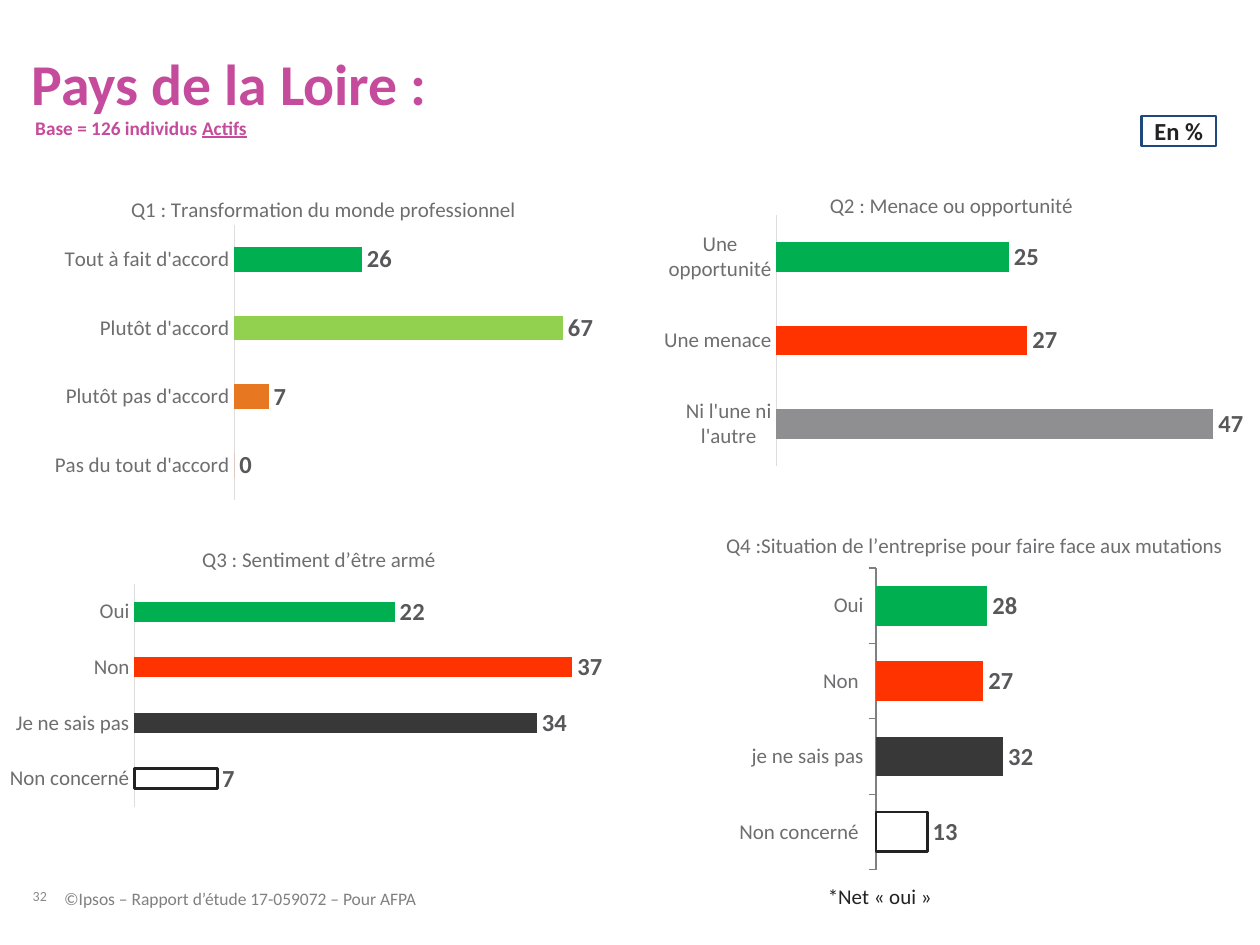
"""Build the Pays de la Loire survey slide with four bar charts."""
from dataclasses import dataclass
from typing import Optional

from lxml import etree
from pptx import Presentation
from pptx import util as u
from pptx.chart.data import CategoryChartData
from pptx.dml.color import RGBColor
from pptx.enum import chart as charts
from pptx.enum import shapes, text

FONT = "Calibri"
COLUMNS, ROWS = 100, 75
COLORS = {
    "pink": "C54B9C", "ink": "222223", "navy": "1F497D", "footer": "808080",
    "number": "888B8D", "label": "6E6E71", "value": "58585B", "axis": "DDDDDE",
    "green": "00B050", "lime": "92D050", "orange": "E87722", "red": "FF3300",
    "gray": "8F8F92", "dark": "383839",
}
CHART_NS = "http://schemas.openxmlformats.org/drawingml/2006/chart"


@dataclass
class Area:
    """Place on the page, in grid columns and rows."""
    column: float
    row: float
    columns: float
    rows: float


@dataclass
class Label:
    """One line of text, as spans with an underline flag."""
    area: Area
    spans: tuple[tuple[str, bool], ...]
    size: float
    color: str
    bold: bool = False
    spacing: Optional[float] = None
    wrap: bool = True
    anchor: text.MSO_ANCHOR = text.MSO_ANCHOR.TOP


@dataclass
class Bar:
    """One answer; a bar without colour is outlined only."""
    answer: str
    value: int
    color: Optional[str] = None


@dataclass
class Question:
    """One bar chart, with title and plot as shares of its area."""
    area: Area
    title: str
    title_at: tuple[float, float]
    plot: tuple[float, float, float, float]
    maximum: int
    bars: tuple[Bar, ...]
    gap: int = 182
    axis: str = "axis"
    ticks: bool = False


LABELS = (
    Label(Area(2.6, 68.3, 3.4, 3.5), (("32", False),), 8, "number", spacing=0.85,
          wrap=False, anchor=text.MSO_ANCHOR.BOTTOM),
    Label(Area(2.5, 4.4, 94.6, 5), (("Pays de la Loire :", False),), 33, "pink", True, 0.9),
    Label(Area(2.8, 9.2, 24.4, 3.7),
          (("Base = 126 individus ", False), ("Actifs", True)), 11, "pink", True),
    Label(Area(65.7, 70.1, 19.7, 2), (("*Net « oui »", False),), 12, "ink"),
    Label(Area(5.1, 70.5, 51.4, 6.5),
          (("©Ipsos – Rapport d’étude 17-059072 – Pour AFPA", False),), 10, "footer"),
)
QUESTIONS = (
    Question(Area(3.5, 13.3, 47.2, 26.9), "Q1 : Transformation du monde professionnel",
             (0.14, 0.07), (0.32, 0.17, 0.66, 0.81), 80,
             (Bar("Pas du tout d'accord", 0, "red"), Bar("Plutôt pas d'accord", 7, "orange"),
              Bar("Plutôt d'accord", 67, "lime"), Bar("Tout à fait d'accord", 26, "green"))),
    Question(Area(50.8, 13.3, 49.2, 26.9), "Q2 : Menace ou opportunité",
             (0.3, 0.06), (0.22, 0.14, 0.75, 0.74), 50,
             (Bar("Ni l'une ni l'autre", 47, "gray"), Bar("Une menace", 27, "red"),
              Bar("Une opportunité", 25, "green"))),
    Question(Area(0, 41.4, 50.8, 26), "Q3 : Sentiment d’être armé",
             (0.31, 0.06), (0.21, 0.19, 0.74, 0.68), 40,
             (Bar("Non concerné", 7), Bar("Je ne sais pas", 34, "dark"),
              Bar("Non", 37, "red"), Bar("Oui", 22, "green"))),
    Question(Area(49.2, 41, 50.8, 29.2),
             "Q4 :Situation de l’entreprise pour faire face aux mutations",
             (0.16, 0.03), (0.4, 0.14, 0.56, 0.82), 90,
             (Bar("Non concerné ", 13), Bar("je ne sais pas", 32, "dark"),
              Bar("Non ", 27, "red"), Bar("Oui", 28, "green")),
             gap=90, axis="footer", ticks=True),
)


def rgb(name: str) -> RGBColor:
    return RGBColor.from_string(COLORS[name])


def place(deck, area: Area) -> tuple[int, int, int, int]:
    column, row = deck.slide_width / COLUMNS, deck.slide_height / ROWS
    return (round(area.column * column), round(area.row * row),
            round(area.columns * column), round(area.rows * row))


def set_font(font, size: float, color: str, bold: bool = False) -> None:
    font.name, font.size, font.bold = FONT, u.Pt(size), bold
    font.color.rgb = rgb(color)


def clear_margins(frame) -> None:
    frame.margin_left = frame.margin_right = frame.margin_top = frame.margin_bottom = 0


def draw_label(deck, page, label: Label) -> None:
    frame = page.shapes.add_textbox(*place(deck, label.area)).text_frame
    clear_margins(frame)
    frame.word_wrap, frame.vertical_anchor = label.wrap, label.anchor
    para = frame.paragraphs[0]
    para.line_spacing = label.spacing
    set_font(para.font, label.size, label.color, label.bold)
    for words, underlined in label.spans:
        span = para.add_run()
        span.text = words
        if underlined:
            span.font.underline = True


def draw_unit(deck, page) -> None:
    box = page.shapes.add_shape(shapes.MSO_SHAPE.RECTANGLE, *place(deck, Area(90.6, 9.2, 5.9, 2.4)))
    box.shadow.inherit = False
    box.fill.background()
    box.line.color.rgb, box.line.width = rgb("navy"), u.Pt(1.5)
    clear_margins(box.text_frame)
    para = box.text_frame.paragraphs[0]
    para.text, para.alignment = "En %", text.PP_ALIGN.CENTER
    set_font(para.font, 14, "ink", True)
    para.runs[0].font.color.rgb = rgb("ink")


def set_layout(parent, index: int, shares: tuple[float, ...]) -> None:
    for old in parent.findall(f"{{{CHART_NS}}}layout"):
        parent.remove(old)
    layout = etree.Element(f"{{{CHART_NS}}}layout")
    manual = etree.SubElement(layout, f"{{{CHART_NS}}}manualLayout")
    settings = [("layoutTarget", "inner")] if len(shares) == 4 else []
    settings += [("xMode", "edge"), ("yMode", "edge"), *zip("xywh", shares)]
    for tag, value in settings:
        etree.SubElement(manual, f"{{{CHART_NS}}}{tag}").set("val", str(value))
    parent.insert(index, layout)


def draw_question(deck, page, question: Question) -> None:
    data = CategoryChartData()
    data.categories = [bar.answer for bar in question.bars]
    data.add_series("Series 1", [bar.value for bar in question.bars])
    chart = page.shapes.add_chart(
        charts.XL_CHART_TYPE.BAR_CLUSTERED, *place(deck, question.area), data).chart
    set_font(chart.font, 10, "ink")
    chart.has_legend = False

    title = chart.chart_title
    title.include_in_layout = False
    para = title.text_frame.paragraphs[0]
    para.text = question.title
    set_font(para.font, 12, "label")
    set_layout(title.text_frame._txBody.getparent().getparent(), 1, question.title_at)

    answers, values = chart.category_axis, chart.value_axis
    answers.major_tick_mark = (charts.XL_TICK_MARK.OUTSIDE if question.ticks
                               else charts.XL_TICK_MARK.NONE)
    answers.minor_tick_mark = charts.XL_TICK_MARK.NONE
    answers.format.line.color.rgb = rgb(question.axis)
    answers.format.line.width = u.Pt(0.75)
    set_font(answers.tick_labels.font, 12, "label")
    values.visible = values.has_major_gridlines = False
    values.minimum_scale, values.maximum_scale = 0, question.maximum

    plot = chart.plots[0]
    plot.vary_by_categories, plot.gap_width = False, question.gap
    plot.has_data_labels = True
    plot.data_labels.show_value = True
    plot.data_labels.position = charts.XL_LABEL_POSITION.OUTSIDE_END
    set_font(plot.data_labels.font, 14, "value", True)
    set_layout(chart._chartSpace.chart.plotArea, 0, question.plot)
    for index, bar in enumerate(question.bars):
        look = plot.series[0].points[index].format
        if bar.color:
            look.fill.solid()
            look.fill.fore_color.rgb = rgb(bar.color)
        else:
            look.fill.background()
            look.line.color.rgb, look.line.width = rgb("ink"), u.Pt(1.5)


def main() -> None:
    deck = Presentation()
    deck.slide_width, deck.slide_height = u.Inches(10), u.Inches(7.5)
    page = deck.slides.add_slide(deck.slide_layouts[6])
    for question in QUESTIONS:
        draw_question(deck, page, question)
    for label in LABELS:
        draw_label(deck, page, label)
    draw_unit(deck, page)
    deck.save("out.pptx")


if __name__ == "__main__":
    main()
